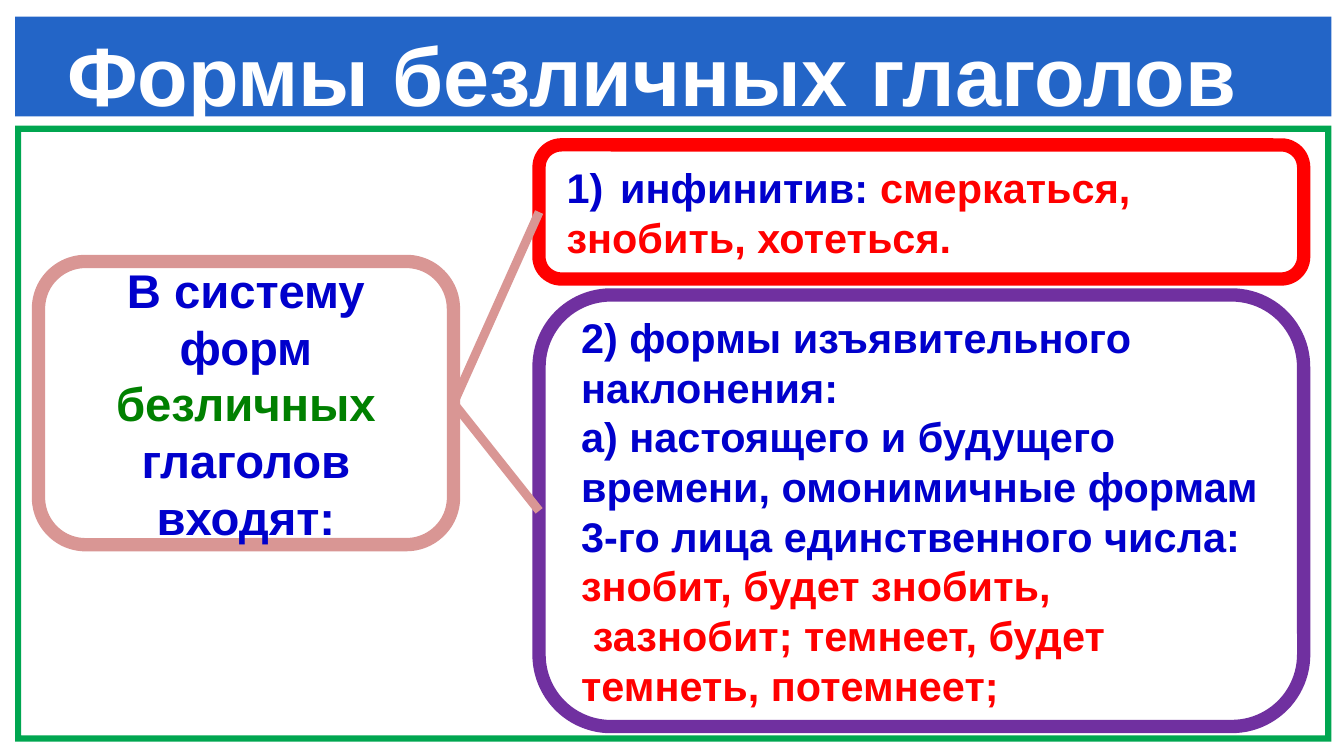
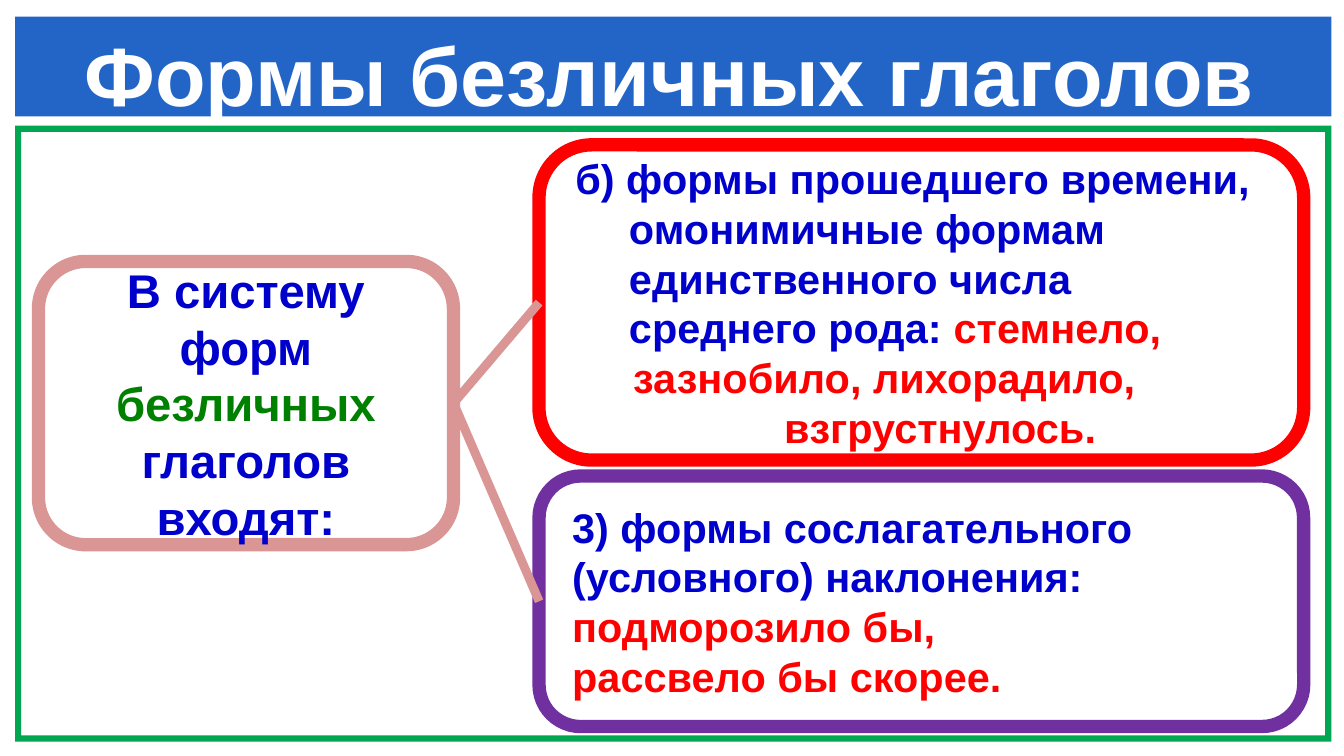
"""Build two slides on the forms of impersonal verbs."""
import pptx
import pptx.util
import pptx.dml.color
import pptx.enum.shapes
import pptx.enum.text
import pptx.oxml.ns
import lxml.etree

Cm = pptx.util.Cm
Pt = pptx.util.Pt
RGBColor = pptx.dml.color.RGBColor
SHAPE = pptx.enum.shapes.MSO_SHAPE
ALIGN = pptx.enum.text.PP_ALIGN
ANCHOR = pptx.enum.text.MSO_ANCHOR
AUTO_SIZE = pptx.enum.text.MSO_AUTO_SIZE
qn = pptx.oxml.ns.qn

WHITE = RGBColor(0xFF, 0xFF, 0xFF)
BAND_BLUE = RGBColor(0x23, 0x65, 0xC7)
FRAME_GREEN = RGBColor(0x00, 0xA6, 0x50)
BLUE = RGBColor(0x00, 0x00, 0xCC)
GREEN = RGBColor(0x00, 0x80, 0x00)
RED = RGBColor(0xFF, 0x00, 0x00)
PURPLE = RGBColor(0x70, 0x30, 0xA0)
PINK = RGBColor(0xD9, 0x96, 0x94)

FONT = "Arial"
TITLE = "Формы безличных глаголов"
RIGHT_LEFT, RIGHT_WIDTH = 6.43, 9.12
RIGHT_TOP, RIGHT_BOTTOM, RIGHT_GAP = 1.73, 8.67, 0.19

SYSTEM = [
    (0, 0, False, [("В систему форм ", BLUE), ("безличных ", GREEN), ("глаголов входят:", BLUE)]),
]
SLIDES = [
    {
        "title_left": 0.8,
        "upper_height": 1.6,
        "upper": [
            (0.64, -0.64, True, [("инфинитив: ", BLUE), ("смеркаться,", RED)]),
            (0, 0, False, [("знобить, хотеться.", RED)]),
        ],
        "lower": [
            (0, 0, False, [("2) формы изъявительного наклонения:", BLUE)]),
            (0, 0, False, [
                ("а) настоящего и будущего времени, омонимичные формам "
                 "3-го лица единственного числа: ", BLUE),
                ("знобит, будет знобить,", RED),
            ]),
            (0, 0.14, False, [("зазнобит; темнеет, будет темнеть, потемнеет;", RED)]),
        ],
    },
    {
        "title_left": 1.01,
        "upper_height": 3.76,
        "upper": [
            (0.64, -0.64, False, [
                ("б) формы прошедшего времени, омонимичные формам "
                 "единственного числа среднего рода: ", BLUE),
                ("стемнело,", RED),
            ]),
            (0.64, 0.05, False, [("зазнобило, лихорадило,", RED)]),
            (0.64, 1.85, False, [("взгрустнулось.", RED)]),
        ],
        "lower": [
            (0, 0, False, [("3) формы сослагательного (условного) наклонения:", BLUE)]),
            (0, 0, False, [("подморозило бы,", RED)]),
            (0, 0, False, [("рассвело бы скорее.", RED)]),
        ],
    },
]


def write_text(frame, paragraphs, size, align, anchor):
    """Fill a text frame with paragraphs of coloured bold text."""
    frame_format = {"word_wrap": True, "auto_size": AUTO_SIZE.NONE, "vertical_anchor": anchor}
    for name, value in frame_format.items():
        setattr(frame, name, value)
    for index, (margin, indent, numbered, spans) in enumerate(paragraphs):
        para = frame.add_paragraph() if index else frame.paragraphs[0]
        para_format = {"alignment": align, "line_spacing": Pt(size * 1.2),
                       "space_before": Pt(0), "space_after": Pt(0)}
        for name, value in para_format.items():
            setattr(para, name, value)
        properties = para._p.get_or_add_pPr()
        properties.set("marL", str(Cm(margin)))
        properties.set("indent", str(Cm(indent)))
        if numbered:
            lxml.etree.SubElement(properties, qn("a:buFont"), typeface="+mj-lt")
            lxml.etree.SubElement(properties, qn("a:buAutoNum"), type="arabicParenR")
        for text, colour in spans:
            span = para.add_run()
            span.text = text
            for name, value in {"name": FONT, "size": Pt(size), "bold": True}.items():
                setattr(span.font, name, value)
            span.font.color.rgb = colour


def add_box(page, place, colour, paragraphs, size, align):
    """Add an outlined rounded box holding text."""
    box = page.shapes.add_shape(SHAPE.ROUNDED_RECTANGLE, *map(Cm, place))
    box.shadow.inherit = False
    box.fill.background()
    box.line.color.rgb = colour
    box.line.width = Pt(4.5)
    write_text(box.text_frame, paragraphs, size, align, ANCHOR.MIDDLE)
    return box


deck = pptx.Presentation()
deck.slide_width = Cm(16.03)
deck.slide_height = Cm(9.02)
layout = deck.slide_layouts[5]

for number, content in enumerate(SLIDES):
    page = deck.slides.add_slide(layout)

    if number == 0:
        backdrop = [
            (SHAPE.FRAME, (0.18, 1.5, 15.7, 7.35), FRAME_GREEN),
            (SHAPE.RECTANGLE, (0.18, 0.2, 15.7, 1.19), BAND_BLUE),
        ]
        for position, (kind, place, colour) in enumerate(backdrop):
            panel = page.shapes.add_shape(kind, *map(Cm, place))
            panel.shadow.inherit = False
            panel.fill.solid()
            panel.fill.fore_color.rgb = colour
            panel.line.fill.background()
            if kind == SHAPE.FRAME:
                panel.adjustments[0] = 0.01
            layout.shapes._spTree.insert(2 + position, panel._element)

    title = page.shapes.title
    title_format = {"left": Cm(content["title_left"]), "top": Cm(0.28),
                    "width": Cm(14.9), "height": Cm(1.19)}
    for name, value in title_format.items():
        setattr(title, name, value)
    for side in ("left", "top", "right", "bottom"):
        setattr(title.text_frame, f"margin_{side}", 0)
    write_text(title.text_frame, [(0, 0, False, [(TITLE, WHITE)])], 28, ALIGN.LEFT, ANCHOR.TOP)

    system_box = add_box(page, (0.46, 3.12, 4.95, 3.38), PINK, SYSTEM, 16, ALIGN.CENTER)
    upper_height = content["upper_height"]
    lower_top = RIGHT_TOP + upper_height + RIGHT_GAP
    form_boxes = [
        add_box(page, (RIGHT_LEFT, top, RIGHT_WIDTH, height), colour, content[key], 14, ALIGN.LEFT)
        for key, top, height, colour in (
            ("upper", RIGHT_TOP, upper_height, RED),
            ("lower", lower_top, RIGHT_BOTTOM - lower_top, PURPLE),
        )
    ]

    for form_box in form_boxes:
        link = page.shapes.add_connector(pptx.enum.shapes.MSO_CONNECTOR.STRAIGHT, 0, 0, 0, 0)
        link.begin_connect(system_box, 3)
        link.end_connect(form_box, 1)
        link.line.color.rgb = PINK
        link.line.width = Pt(3)
        lxml.etree.SubElement(link._element.spPr, qn("a:effectLst"))

deck.save("out.pptx")
